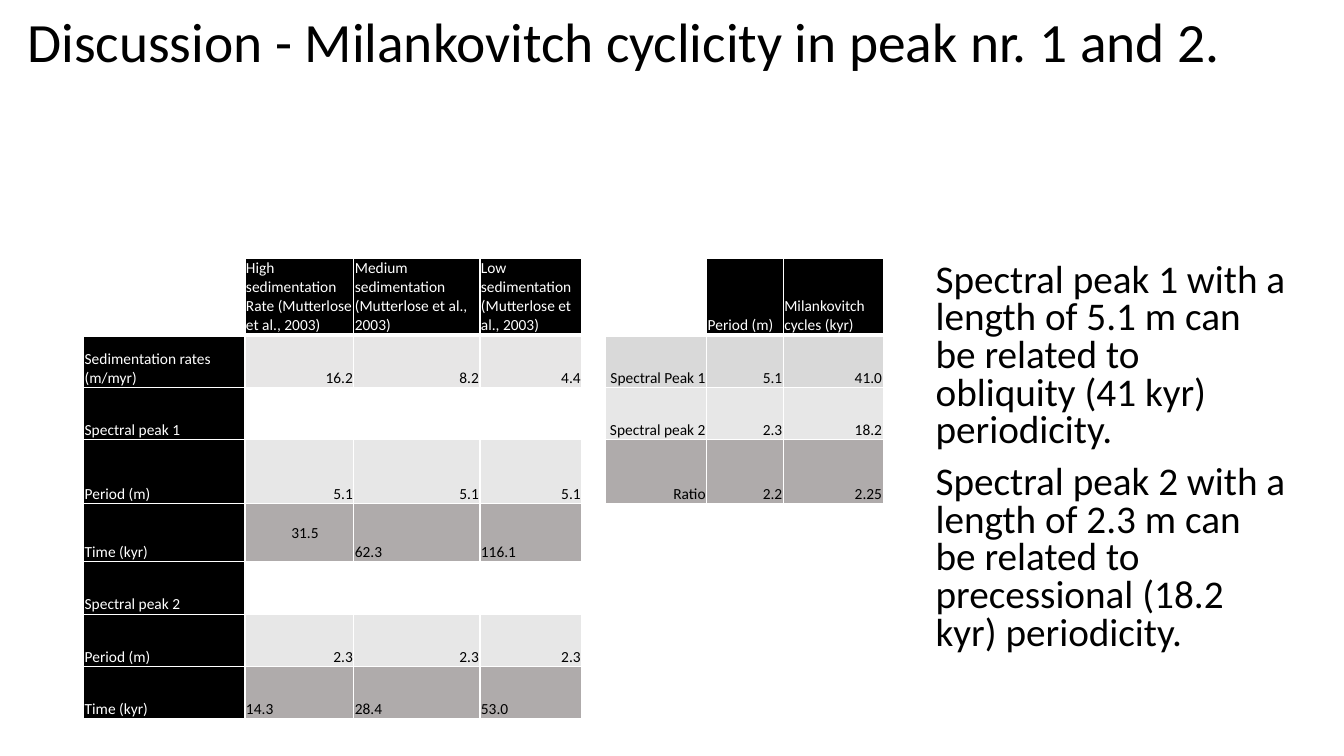
"""Build the slide on Milankovitch cyclicity in spectral peaks 1 and 2."""
import pptx
import pptx.dml.color
import pptx.enum.text
import pptx.oxml
import pptx.oxml.ns
import pptx.util

Inches = pptx.util.Inches
Pt = pptx.util.Pt
Align = pptx.enum.text.PP_ALIGN
Anchor = pptx.enum.text.MSO_ANCHOR
RGBColor = pptx.dml.color.RGBColor

BLACK = RGBColor(0x00, 0x00, 0x00)
WHITE = RGBColor(0xFF, 0xFF, 0xFF)
PALE = RGBColor(0xE7, 0xE6, 0xE6)
LIGHT = RGBColor(0xD9, 0xD9, 0xD9)
SOFT = RGBColor(0xE7, 0xE7, 0xE7)
GREY = RGBColor(0xAF, 0xAB, 0xAB)
FONT = "Calibri"

TITLE = "Discussion - Milankovitch cyclicity in peak nr. 1 and 2."
FINDINGS = [
    "Spectral peak 1 with a length of 5.1 m can be related to obliquity (41 kyr) periodicity.",
    "Spectral peak 2 with a length of 2.3 m can be related to precessional (18.2 kyr) periodicity.",
]
HEADER = ["", "High sedimentation\nRate (Mutterlose et al., 2003)",
          "Medium sedimentation (Mutterlose et al., 2003)",
          "Low sedimentation (Mutterlose et al., 2003)",
          "", "", "Period (m)", "Milankovitch cycles (kyr)"]
RATES = [
    ("Sedimentation rates (m/myr)", ["16.2", "8.2", "4.4"], PALE, Align.RIGHT),
    ("Spectral peak 1", [], None, None),
    ("Period (m)", ["5.1", "5.1", "5.1"], SOFT, Align.RIGHT),
    ("Time (kyr)", ["31.5", "62.3", "116.1"], GREY, Align.LEFT),
    ("Spectral peak 2", [], None, None),
    ("Period (m)", ["2.3", "2.3", "2.3"], SOFT, Align.RIGHT),
    ("Time (kyr)", ["14.3", "28.4", "53.0"], GREY, Align.LEFT),
]
CYCLES = [
    (["Spectral Peak 1", "5.1", "41.0"], LIGHT),
    (["Spectral peak 2", "2.3", "18.2"], SOFT),
    (["Ratio", "2.2", "2.25"], GREY),
]
CYCLES_COLUMN = 5
COLUMN_WIDTHS = [1.6, 1.08, 1.25, 1.01, 0.18, 1, 0.76, 0.99]
ROW_HEIGHTS = [0.76, 0.52, 0.52, 0.63, 0.58, 0.52, 0.52, 0.52]


def place(shape, left, top, width, height):
    """Position a shape, in inches."""
    shape.left, shape.top = Inches(left), Inches(top)
    shape.width, shape.height = Inches(width), Inches(height)


def write(paragraph, text, size, color, alignment=Align.LEFT):
    """Add one formatted run to a paragraph."""
    paragraph.alignment = alignment
    run = paragraph.add_run()
    run.text = text
    run.font.name, run.font.size = FONT, Pt(size)
    run.font.color.rgb = color


def add_borders(cell, bottom):
    """Give a cell white borders."""
    properties = cell._tc.get_or_add_tcPr()
    for side, width in (("L", 1), ("R", 1), ("T", 1), ("B", bottom)):
        properties.append(pptx.oxml.parse_xml(
            f'<a:ln{side} {pptx.oxml.ns.nsdecls("a")} w="{Pt(width)}"><a:solidFill>'
            f'<a:srgbClr val="{WHITE}"/></a:solidFill></a:ln{side}>'))


def fill_cell(cell, text, fill, color=BLACK, alignment=Align.LEFT):
    """Write text at the bottom of a filled cell."""
    cell.fill.solid()
    cell.fill.fore_color.rgb = fill
    cell.vertical_anchor = Anchor.BOTTOM
    cell.margin_left = cell.margin_right = cell.margin_top = Inches(0.01)
    cell.margin_bottom = 0
    frame = cell.text_frame
    for index, line in enumerate(text.split("\n")):
        paragraph = frame.add_paragraph() if index else frame.paragraphs[0]
        write(paragraph, line, 11, color, alignment)


def add_sedimentation_table(slide):
    """Add the rates and cycles as one grid."""
    table = slide.shapes.add_table(
        len(ROW_HEIGHTS), len(COLUMN_WIDTHS), Inches(0.83), Inches(2.56),
        Inches(sum(COLUMN_WIDTHS)), Inches(sum(ROW_HEIGHTS))).table
    table.first_row = table.horz_banding = False
    for column, width in zip(table.columns, COLUMN_WIDTHS):
        column.width = Inches(width)
    for index, (row, height) in enumerate(zip(table.rows, ROW_HEIGHTS)):
        row.height = Inches(height)
        for cell in row.cells:
            add_borders(cell, 1 if index else 3)
            cell.fill.background()

    for column, text in enumerate(HEADER):
        if text:
            fill_cell(table.cell(0, column), text, BLACK, WHITE)
    for row, (label, values, fill, alignment) in enumerate(RATES, 1):
        fill_cell(table.cell(row, 0), label, BLACK, WHITE)
        for column, value in enumerate(values, 1):
            fill_cell(table.cell(row, column), value, fill, BLACK, alignment)
    for row, (values, fill) in enumerate(CYCLES, 1):
        for column, value in enumerate(values, CYCLES_COLUMN):
            fill_cell(table.cell(row, column), value, fill, BLACK, Align.RIGHT)

    raised_time = table.cell(4, 1)
    raised_time.margin_left, raised_time.margin_bottom = Inches(0.46), Inches(0.19)


def main():
    """Build and save the slide."""
    presentation = pptx.Presentation()
    presentation.slide_width, presentation.slide_height = Inches(13.33), Inches(7.5)
    slide = presentation.slides.add_slide(presentation.slide_layouts[1])

    title, body = slide.placeholders
    place(title, 0.17, 0.09, 12.25, 1.21)
    place(body, 9.18, 2.56, 3.68, 4.39)
    for shape in (title, body):
        shape.text_frame.auto_size = pptx.enum.text.MSO_AUTO_SIZE.NONE
        shape.text_frame.vertical_anchor = Anchor.TOP

    heading = title.text_frame.paragraphs[0]
    heading.line_spacing = 0.9
    write(heading, TITLE, 39.6, BLACK)

    for index, finding in enumerate(FINDINGS):
        frame = body.text_frame
        paragraph = frame.add_paragraph() if index else frame.paragraphs[0]
        paragraph.line_spacing, paragraph.space_before = 0.8, Pt(10)
        write(paragraph, finding, 28, BLACK)
        properties = paragraph._p.get_or_add_pPr()
        properties.set("marL", "0")
        properties.set("indent", "0")
        properties.append(pptx.oxml.parse_xml(f'<a:buNone {pptx.oxml.ns.nsdecls("a")}/>'))

    add_sedimentation_table(slide)
    presentation.save("out.pptx")


if __name__ == "__main__":
    main()
